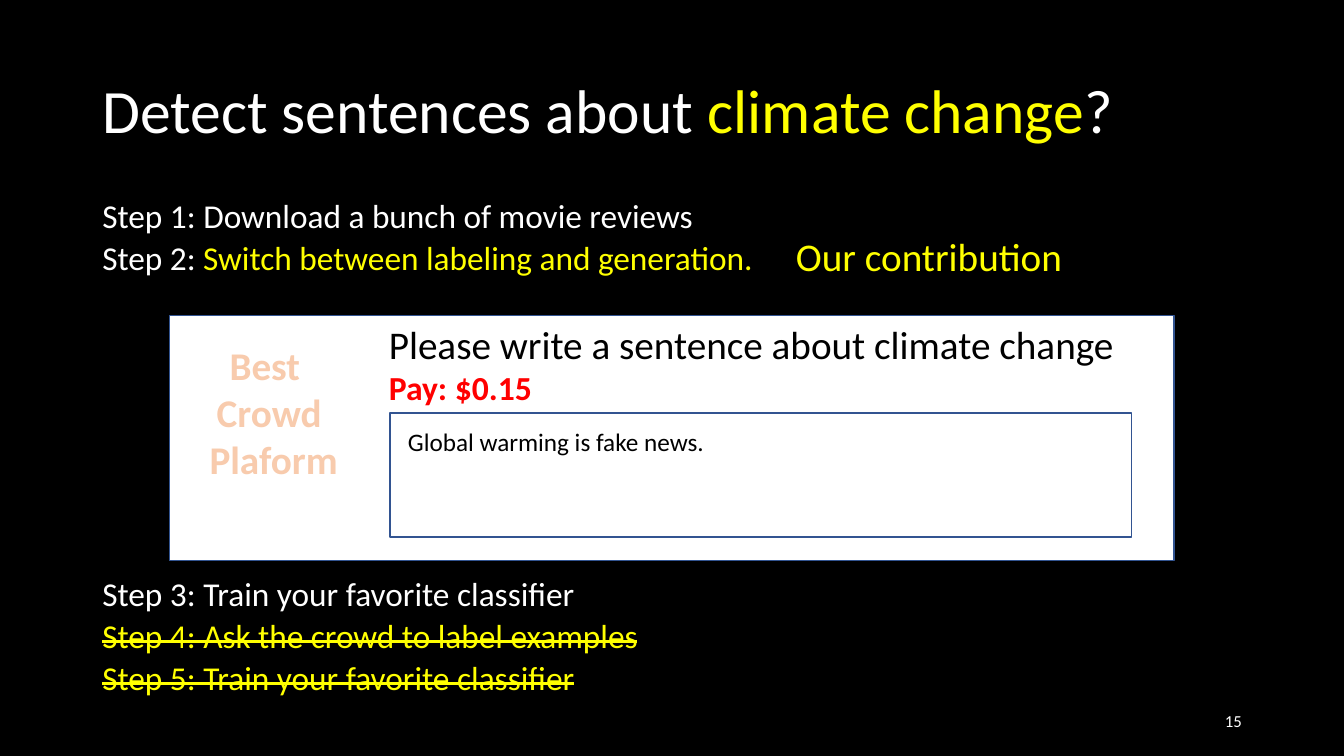
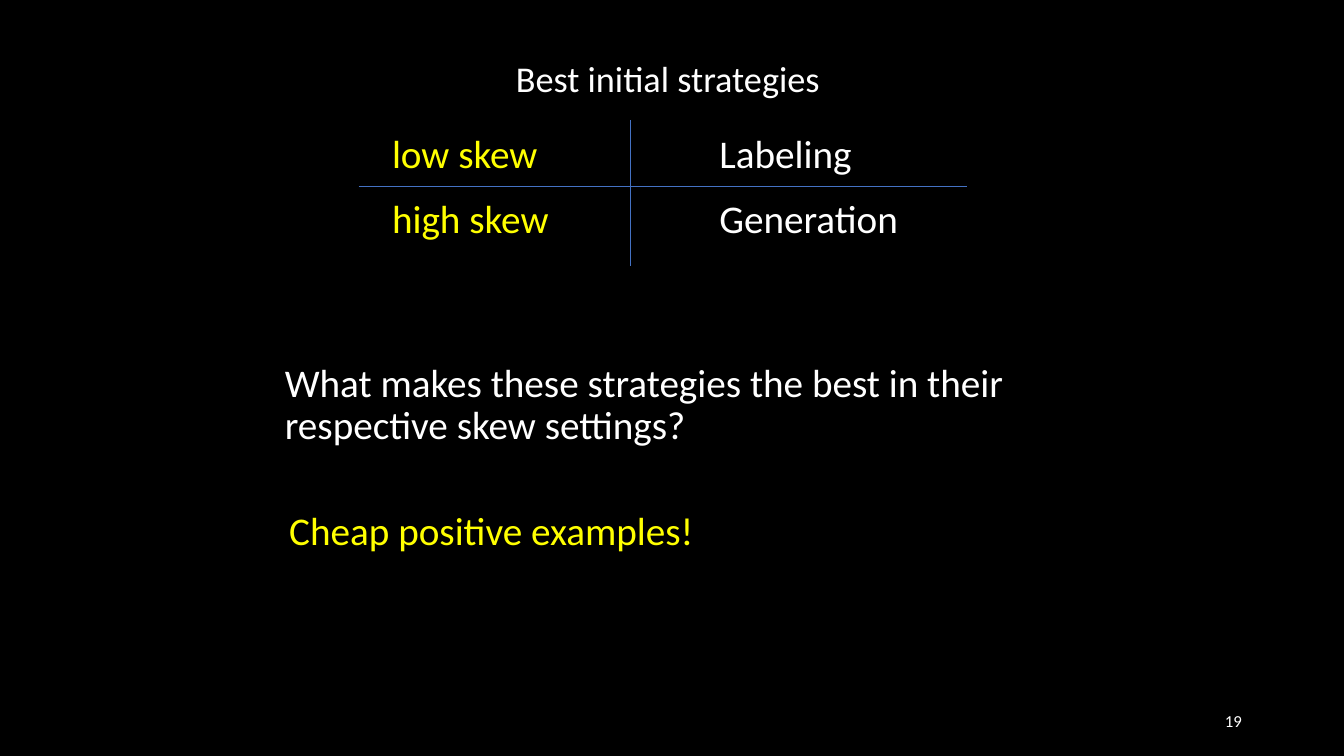
from lxml import etree
from pptx import Presentation
from pptx.dml.color import RGBColor
from pptx.enum.shapes import MSO_CONNECTOR, MSO_SHAPE
from pptx.enum.text import MSO_ANCHOR, PP_ALIGN
from pptx.oxml import parse_xml
from pptx.oxml.ns import nsdecls, qn
from pptx.util import Cm, Pt

LEFT, CENTER, RIGHT = PP_ALIGN.LEFT, PP_ALIGN.CENTER, PP_ALIGN.RIGHT
TOP, MIDDLE = MSO_ANCHOR.TOP, MSO_ANCHOR.MIDDLE
RECT, STRAIGHT = MSO_SHAPE.RECTANGLE, MSO_CONNECTOR.STRAIGHT

BLACK = RGBColor(0x00, 0x00, 0x00)
WHITE = RGBColor(0xFF, 0xFF, 0xFF)
YELLOW = RGBColor(0xFF, 0xFF, 0x00)
RED = RGBColor(0xFF, 0x00, 0x00)
PEACH = RGBColor(0xF8, 0xCB, 0xAD)
ORANGE = RGBColor(0xED, 0x7D, 0x31)
BLUE = RGBColor(0x44, 0x72, 0xC4)
DARK_BLUE = RGBColor(0x32, 0x54, 0x91)
FONT = "Calibri"

# Content: a paragraph is a list of (text, colour) runs
TITLE = [[("Detect sentences about ", WHITE), ("climate change", YELLOW), ("?", WHITE)]]
STEPS = [
    [("Step 1: Download a bunch of movie reviews", WHITE)],
    [("Step 2: ", WHITE), ("Switch between labeling and generation.", YELLOW)],
    [("Step 3: Train your favorite classifier", WHITE)],
    [("Step 4: Ask the crowd to label examples", YELLOW)],
    [("Step 5: Train your favorite classifier", YELLOW)],
]
FORM_STEP = 2          # the step that follows the crowd form
DROPPED_STEPS = (3, 4)
PLATFORM = ["Best ", "Crowd", " Plaform"]
STRATEGIES = [("low skew", "Labeling"), ("high skew", "Generation")]
QUESTION = "What makes these strategies the best in their respective skew settings?"


def add_text(s, box, paragraphs, size, color=WHITE, align=LEFT, anchor=TOP,
             bold=False, wrap=True, line=1.0, before=0):
    """Add a text box; a plain string stands for a paragraph in one colour."""
    tf = s.shapes.add_textbox(*map(Cm, box)).text_frame
    tf.word_wrap, tf.vertical_anchor = wrap, anchor
    for i, content in enumerate(paragraphs):
        p = tf.paragraphs[0] if i == 0 else tf.add_paragraph()
        p.alignment, p.line_spacing, p.space_before = align, line, Pt(before)
        p.font.name, p.font.size, p.font.bold = FONT, Pt(size), bold
        if isinstance(content, str):
            p.font.color.rgb = color
            content = [(content, None)]
        for text, run_color in content:
            r = p.add_run()
            r.text = text
            if run_color is not None:
                r.font.color.rgb = run_color
    return tf


def add_box(s, box, fill=None):
    shape = s.shapes.add_shape(RECT, *map(Cm, box))
    shape.shadow.inherit = False
    if fill is None:
        shape.fill.background()
    else:
        shape.fill.solid()
        shape.fill.fore_color.rgb = fill
    shape.line.color.rgb, shape.line.width = DARK_BLUE, Pt(1)


def add_line(s, *ends):
    line = s.shapes.add_connector(STRAIGHT, *map(Cm, ends))
    line.line.color.rgb, line.line.width = BLUE, Pt(0.5)
    etree.SubElement(line._element.spPr, qn("a:effectLst"))


def add_slide(prs, number):
    s = prs.slides.add_slide(prs.slide_layouts[6])
    add_text(s, (23.93, 17.66, 7.62, 1.01), [str(number)], 12, align=RIGHT, anchor=MIDDLE)
    return s


def outline(r, color, width):
    r._r.get_or_add_rPr().insert(0, parse_xml(
        f'<a:ln {nsdecls("a")} w="{Pt(width)}"><a:solidFill>'
        f'<a:srgbClr val="{color}"/></a:solidFill></a:ln>'))


def build_detection(prs):
    s = add_slide(prs, 15)
    add_text(s, (2.33, 1.01, 29.21, 3.68), TITLE, 44, anchor=MIDDLE, line=0.9)

    # Steps, with room for the form between the second and the third
    tf = add_text(s, (2.33, 5.07, 29.21, 13.28), STEPS, 23.8, line=0.7, before=10)
    tf.paragraphs[FORM_STEP].space_before = Pt(220)
    for i in DROPPED_STEPS:
        for r in tf.paragraphs[i].runs:
            r._r.get_or_add_rPr().set("strike", "sngStrike")
    add_text(s, (19.81, 5.74, 7.65, 1.45), ["Our contribution"], 28, YELLOW)

    # Crowd form
    add_box(s, (4.27, 7.95, 25.32, 6.17), WHITE)
    add_text(s, (9.55, 7.95, 18.97, 1.45),
             ["Please write a sentence about climate change"], 28, BLACK, wrap=False)
    tf = add_text(s, (4.78, 8.48, 4.01, 3.84), PLATFORM, 28, PEACH,
                  align=CENTER, bold=True, wrap=False)
    for p in tf.paragraphs:
        outline(p.runs[0], ORANGE, 1.75)
    add_text(s, (9.55, 9.12, 15.19, 1.27), ["Pay: $0.15"], 24, RED, bold=True)
    add_box(s, (9.83, 10.41, 18.69, 3.12))
    add_text(s, (10.03, 10.62, 8.05, 1.02), ["Global warming is fake news."],
             18, BLACK, wrap=False)


def build_strategies(prs):
    s = add_slide(prs, 19)
    add_text(s, (12.75, 1.5, 8.79, 1.22), ["Best initial strategies"], 25.9,
             line=0.8, before=10)

    # Skew and strategy grid with its cross lines
    for row, cells in enumerate(STRATEGIES):
        for col, (text, color) in enumerate(zip(cells, (YELLOW, WHITE))):
            add_text(s, (9.63 + 8.25 * col, 3.28 + 1.63 * row, 8.79, 1.42),
                     [text], 28, color, line=0.9, before=10)
    add_line(s, 9.04, 4.7, 24.36, 4.7)
    add_line(s, 15.88, 3.02, 15.88, 6.71)

    # Question and answer
    add_text(s, (6.93, 9.04, 21.89, 2.51), [QUESTION], 28, line=0.9, before=10)
    add_text(s, (7.04, 12.78, 21.89, 2.51), ["Cheap positive examples!"], 28, YELLOW,
             line=0.9, before=10)


def main():
    prs = Presentation()
    prs.slide_width, prs.slide_height = Cm(33.87), Cm(19.05)
    background = prs.slide_master.background.fill
    background.solid()
    background.fore_color.rgb = BLACK
    build_detection(prs)
    build_strategies(prs)
    prs.save("out.pptx")


if __name__ == "__main__":
    main()
